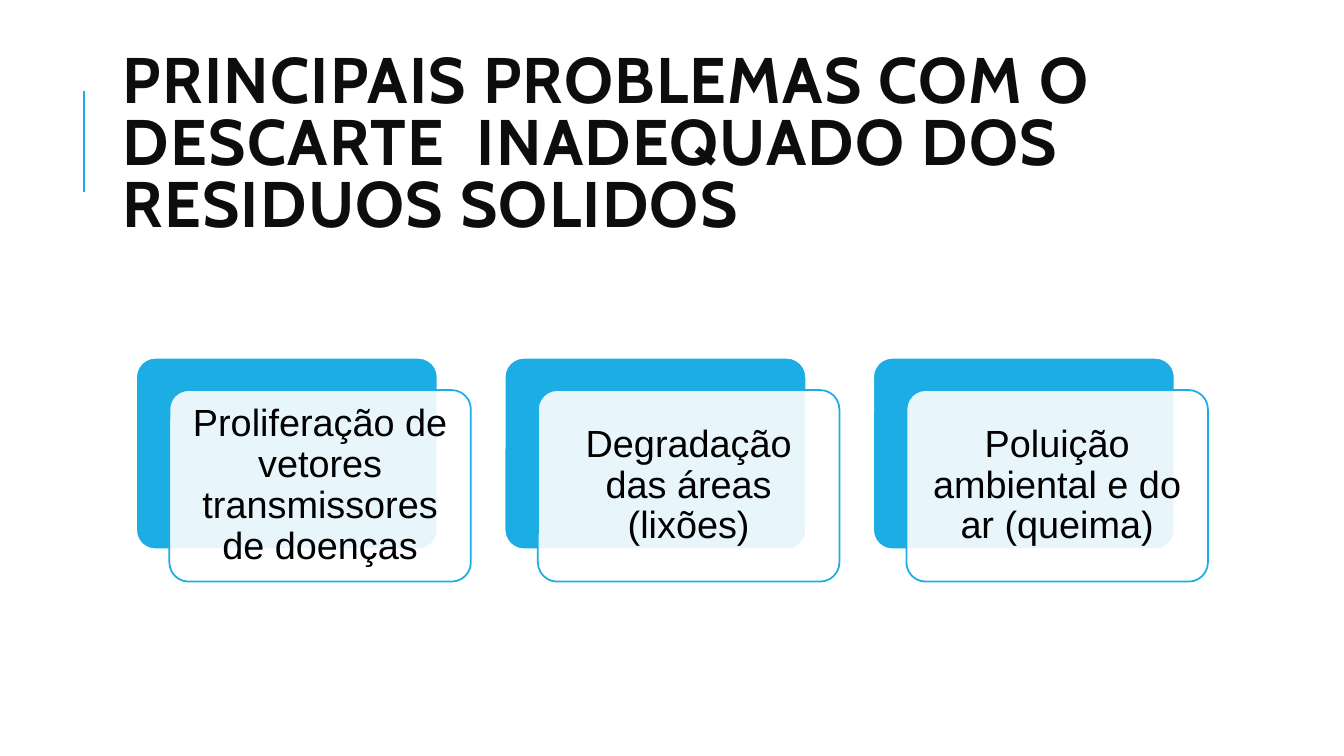
from lxml.etree import SubElement
from pptx import Presentation
from pptx.dml.color import RGBColor
from pptx.enum.shapes import MSO_CONNECTOR, MSO_SHAPE
from pptx.enum.text import MSO_ANCHOR, PP_ALIGN
from pptx.oxml.ns import qn
from pptx.util import Inches, Pt

BLUE = RGBColor(0x1C, 0xAD, 0xE4)
WHITE = RGBColor(0xFF, 0xFF, 0xFF)
BLACK = RGBColor(0, 0, 0)
TITLE_COLOR = RGBColor(0x0D, 0x0D, 0x0D)

TITLE = "PRINCIPAIS PROBLEMAS COM O DESCARTE  INADEQUADO DOS RESIDUOS SOLIDOS"
PROBLEMS = [
    "Proliferação de vetores transmissores de doenças",
    "Degradação das áreas (lixões)",
    "Poluição ambiental e do ar (queima)",
]
CARD_PITCH = 3.655


def set_text(tf, text, font_name, size, color, line_spacing):
    """Write one vertically centred, wrapped paragraph and return it."""
    tf.word_wrap = True
    tf.vertical_anchor = MSO_ANCHOR.MIDDLE
    p = tf.paragraphs[0]
    p.text = text
    p.line_spacing = line_spacing
    p.font.name = font_name
    p.font.size = Pt(size)
    p.font.color.rgb = color
    return p


def add_title(slide, left, top, width, height):
    """Add the heading and the vertical accent line to its left."""
    x = Inches(left - 0.29)
    line = slide.shapes.add_connector(
        MSO_CONNECTOR.STRAIGHT, x, Inches(top + 1.26), x, Inches(top + 0.26))
    line.line.color.rgb = BLUE
    line.line.width = Pt(1.5)
    SubElement(line._element.spPr, qn("a:effectLst"))
    box = slide.shapes.add_textbox(
        Inches(left), Inches(top), Inches(width), Inches(height))
    p = set_text(box.text_frame, TITLE, "Cabin", 46, TITLE_COLOR, 0.8)
    p.font.bold = True
    p.runs[0].font._element.set("spc", "100")


def add_panel(slide, left, top, width, height, fill, outline):
    """Add a rounded rectangle with the given colours."""
    sp = slide.shapes.add_shape(
        MSO_SHAPE.ROUNDED_RECTANGLE,
        Inches(left), Inches(top), Inches(width), Inches(height))
    sp.adjustments[0] = 0.1
    sp.shadow.inherit = False
    sp.fill.solid()
    sp.fill.fore_color.rgb = fill
    sp.line.color.rgb = outline
    sp.line.width = Pt(1.25)
    return sp


def add_card(slide, left, top, width, height, text):
    """Add a blue panel with an offset translucent panel holding the text."""
    add_panel(slide, left, top, width, height, BLUE, WHITE)
    front = add_panel(slide, left + 0.33, top + 0.32, width, height, WHITE, BLUE)
    color = front._element.spPr.find(qn("a:solidFill"))[0]
    SubElement(color, qn("a:alpha"), val="90000")
    tf = front.text_frame
    tf.margin_left = tf.margin_right = Inches(0.11)
    tf.margin_top = tf.margin_bottom = Inches(0.11)
    p = set_text(tf, text, "Arial", 27, BLACK, 0.9)
    p.alignment = PP_ALIGN.CENTER


def main():
    """Build the slide and save it."""
    prs = Presentation()
    prs.slide_width = Inches(13.33)
    prs.slide_height = Inches(7.5)
    slide = prs.slides.add_slide(prs.slide_layouts[6])
    add_title(slide, 1.12, 0.64, 10.63, 1.64)
    for i, text in enumerate(PROBLEMS):
        add_card(slide, 1.35 + i * CARD_PITCH, 3.55, 2.99, 1.9, text)
    prs.save("out.pptx")


if __name__ == "__main__":
    main()
